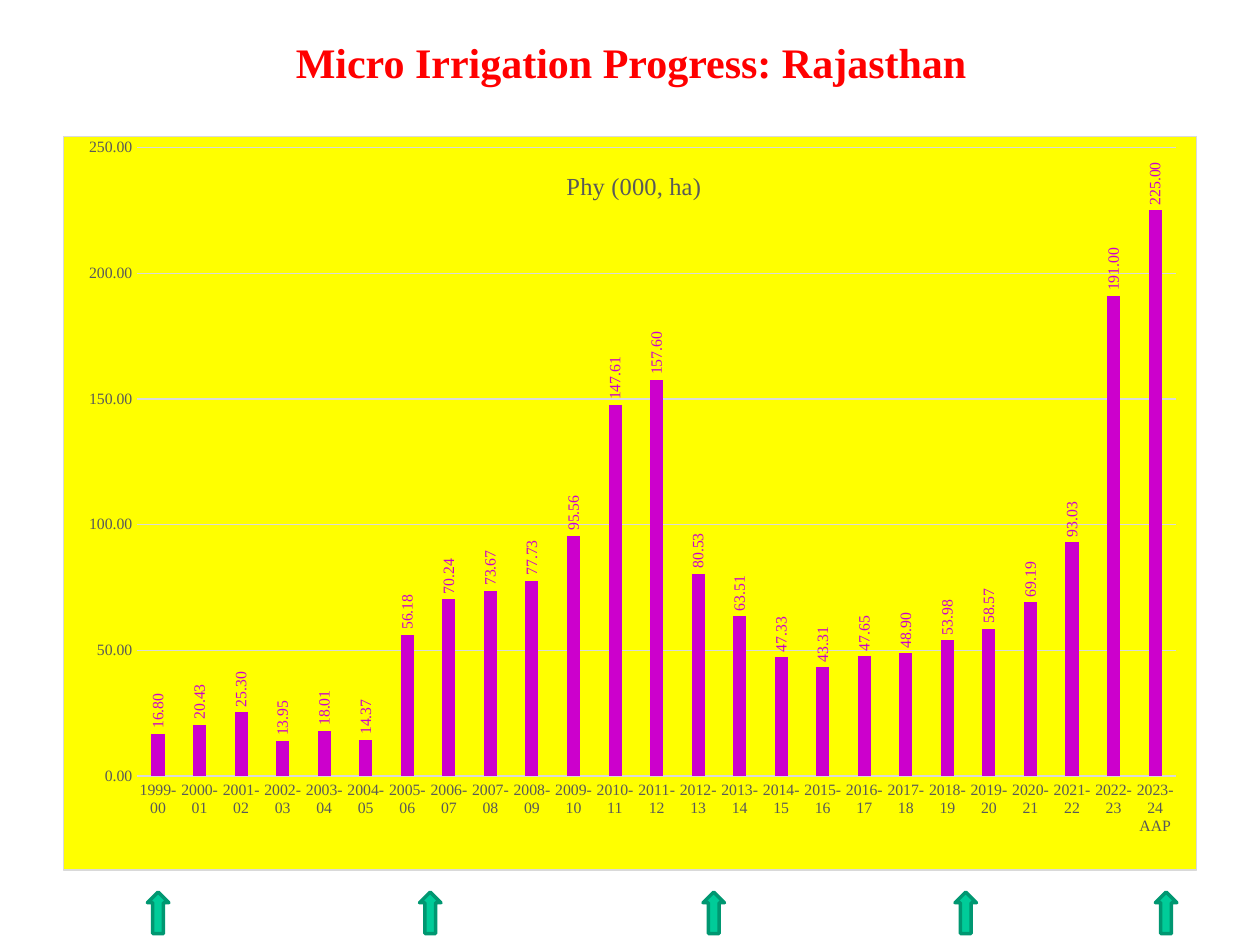
from dataclasses import dataclass

from lxml.etree import SubElement
from pptx import Presentation
from pptx.chart.data import CategoryChartData
from pptx.dml.color import RGBColor
from pptx.enum.chart import XL_CHART_TYPE as ChartType
from pptx.enum.chart import XL_LABEL_POSITION as LabelPosition
from pptx.enum.chart import XL_TICK_MARK as TickMark
from pptx.enum.shapes import MSO_SHAPE as Shape
from pptx.enum.text import MSO_AUTO_SIZE as AutoSize
from pptx.enum.text import PP_ALIGN as Align
from pptx.oxml import parse_xml
from pptx.oxml.ns import nsdecls, qn
from pptx.util import Inches, Pt


@dataclass(frozen=True)
class Theme:
    """Colours, typeface and type sizes of the slide."""
    font: str = "Times New Roman"
    heading: str = "FF0000"
    muted: str = "595959"
    rule: str = "D9D9D9"
    panel: str = "FFFF00"
    bar: str = "CC00CC"
    arrow: str = "00CC99"
    arrow_edge: str = "009771"
    heading_size: int = 24
    chart_title_size: int = 14
    label_size: int = 9


THEME = Theme()
SERIES = "Phy (000, ha)"
FIRST_YEAR = 1999
AREAS = [16.80, 20.43, 25.30, 13.95, 18.01, 14.37, 56.18, 70.24, 73.67,
         77.73, 95.56, 147.61, 157.60, 80.53, 63.51, 47.33, 43.31, 47.65,
         48.90, 53.98, 58.57, 69.19, 93.03, 191.00, 225.00]
ARROW_LEFTS = [1.17, 3.33, 5.58, 7.58, 9.17]


def style_font(font, size, color, bold=False):
    """Apply the theme typeface with a size and colour."""
    font.name, font.size, font.bold = THEME.font, Pt(size), bold
    font.color.rgb = RGBColor.from_string(color)


def style_line(line, color, width):
    """Give a line a solid colour and a width in points."""
    line.color.rgb = RGBColor.from_string(color)
    line.width = Pt(width)


def set_layout(parent, index, **settings):
    """Place a chart part by fractions of the chart space."""
    for old in parent.findall(qn("c:layout")):
        parent.remove(old)
    layout = parse_xml(f"<c:layout {nsdecls('c')}/>")
    manual = SubElement(layout, qn("c:manualLayout"))
    for name, value in settings.items():
        SubElement(manual, qn(f"c:{name}")).set("val", str(value))
    parent.insert(index, layout)


def add_heading(page, box):
    """Write the slide heading."""
    frame = page.shapes.add_textbox(*map(Inches, box)).text_frame
    frame.word_wrap = True
    frame.auto_size = AutoSize.SHAPE_TO_FIT_TEXT
    para = frame.paragraphs[0]
    para.text = "Micro Irrigation Progress: Rajasthan"
    para.alignment = Align.JUSTIFY
    properties = para._p.get_or_add_pPr()
    properties.set("marL", str(Inches(0.43)))
    properties.set("indent", str(Inches(-0.18)))
    style_font(para.font, THEME.heading_size, THEME.heading, bold=True)


def style_axes(chart):
    """Style the year and area axes."""
    years, areas = chart.category_axis, chart.value_axis
    for axis in (years, areas):
        axis.major_tick_mark = axis.minor_tick_mark = TickMark.NONE
        style_font(axis.tick_labels.font, THEME.label_size, THEME.muted)
    style_line(years.format.line, THEME.rule, 0.75)
    areas.format.line.fill.background()
    style_line(areas.major_gridlines.format.line, THEME.rule, 0.75)
    areas.minimum_scale, areas.maximum_scale, areas.major_unit = 0, 250, 50
    areas.tick_labels.number_format = "0.00"
    areas.tick_labels.number_format_is_linked = False


def style_bars(plot):
    """Style the columns and their upright value labels."""
    plot.gap_width, plot.overlap = 219, -27
    plot.vary_by_categories = False
    bars = plot.series[0]
    bars.format.fill.solid()
    bars.format.fill.fore_color.rgb = RGBColor.from_string(THEME.bar)
    bars.format.line.fill.background()
    labels = bars.data_labels
    labels.show_value = True
    labels.number_format = "0.00"
    labels.number_format_is_linked = False
    labels.position = LabelPosition.OUTSIDE_END
    style_font(labels.font, THEME.label_size, THEME.bar)
    body = labels._element.find(f".//{qn('a:bodyPr')}")
    body.set("rot", "-5400000")
    body.set("vert", "horz")


def fill_panel(chart):
    """Fill and outline the chart background."""
    chart._chartSpace.find(qn("c:chart")).addnext(parse_xml(
        f"<c:spPr {nsdecls('c', 'a')}>"
        f'<a:solidFill><a:srgbClr val="{THEME.panel}"/></a:solidFill>'
        f'<a:ln w="{Pt(0.75)}"><a:solidFill><a:srgbClr val="{THEME.rule}"/>'
        "</a:solidFill></a:ln></c:spPr>"))


def add_progress_chart(page, box):
    """Chart the irrigated area for each year."""
    data = CategoryChartData(number_format="0.00")
    years = range(FIRST_YEAR, FIRST_YEAR + len(AREAS))
    data.categories = [f"{year}-{(year + 1) % 100:02}" for year in years[:-1]] + [
        "2023-24 AAP"]
    data.add_series(SERIES, AREAS)
    chart = page.shapes.add_chart(
        ChartType.COLUMN_CLUSTERED, *map(Inches, box), data).chart
    chart.has_legend = False
    chart.font.name, chart.font.size = THEME.font, Pt(10)
    para = chart.chart_title.text_frame.paragraphs[0]
    para.text = SERIES
    style_font(para.font, THEME.chart_title_size, THEME.muted)
    set_layout(chart.chart_title._element, 1,
               xMode="edge", yMode="edge", x=0.44, y=0.04)
    set_layout(chart._chartSpace.find(f".//{qn('c:plotArea')}"), 0,
               layoutTarget="inner", xMode="edge", yMode="edge",
               x=0.065, y=0.015, w=0.917, h=0.857)
    style_axes(chart)
    style_bars(chart.plots[0])
    fill_panel(chart)


def add_arrow(page, box):
    """Draw one upward marker below the chart."""
    arrow = page.shapes.add_shape(Shape.UP_ARROW, *map(Inches, box))
    arrow.shadow.inherit = False
    arrow.fill.solid()
    arrow.fill.fore_color.rgb = RGBColor.from_string(THEME.arrow)
    style_line(arrow.line, THEME.arrow_edge, 2)


def main():
    """Build and save the slide."""
    deck = Presentation()
    deck.slide_width, deck.slide_height = Inches(10), Inches(7.5)
    page = deck.slides.add_slide(deck.slide_layouts[6])
    add_heading(page, (2, 0.24, 6.33, 0.51))
    for left in ARROW_LEFTS:
        add_arrow(page, (left, 7.08, 0.17, 0.33))
    add_progress_chart(page, (0.5, 1.08, 9, 5.83))
    deck.save("out.pptx")


if __name__ == "__main__":
    main()
